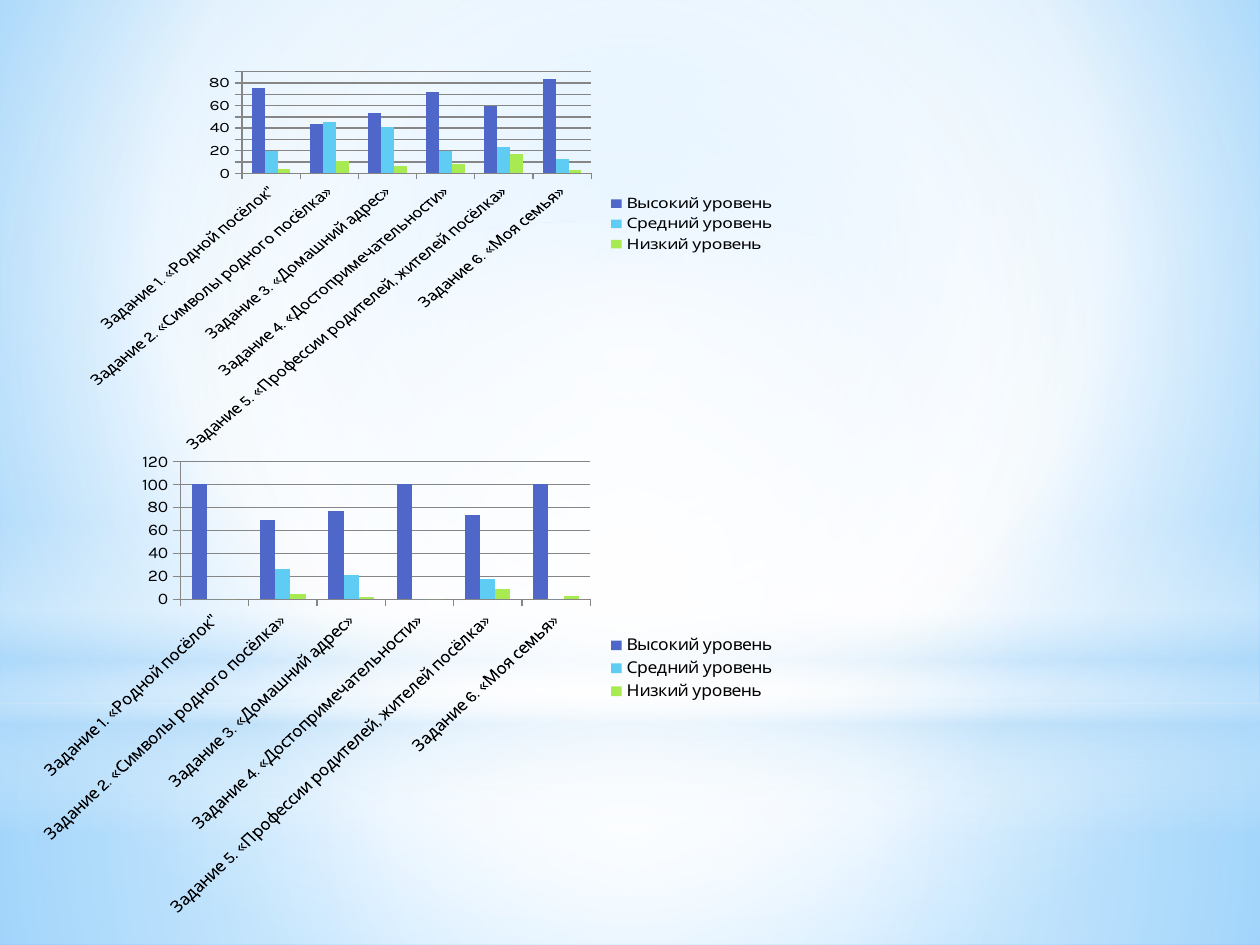
from lxml import etree
from pptx import Presentation
from pptx.chart.data import CategoryChartData
from pptx.dml.color import RGBColor
from pptx.enum.chart import XL_CHART_TYPE, XL_LEGEND_POSITION, XL_TICK_MARK
from pptx.enum.shapes import MSO_SHAPE
from pptx.oxml.ns import qn
from pptx.util import Inches, Pt

FONT = "Karla"
BLACK = RGBColor(0x00, 0x00, 0x00)
GRAY = RGBColor(0x86, 0x86, 0x86)
WHITE = RGBColor(0xFF, 0xFF, 0xFF)
PALE_BLUE = RGBColor(0xB4, 0xDC, 0xFA)
SKY_BLUE = RGBColor(0x9E, 0xD5, 0xFF)
DEEP_SKY = RGBColor(0x5B, 0xB9, 0xFF)
LEVELS = {
    "Высокий уровень": RGBColor(0x4E, 0x67, 0xC8),
    "Средний уровень": RGBColor(0x5E, 0xCC, 0xF3),
    "Низкий уровень": RGBColor(0xA7, 0xEA, 0x52),
}
TASKS = [
    'Задание 1. «Родной посёлок"',
    "Задание 2. «Символы родного посёлка»",
    "Задание 3. «Домашний адрес»",
    "Задание 4. «Достопримечательности»",
    "Задание 5. «Профессии родителей, жителей посёлка»",
    "Задание 6. «Моя семья»",
]
FIRST_RESULTS = [
    (76, 44, 53, 72, 60, 84),
    (20, 45, 41, 20, 23, 13),
    (4, 11, 6, 8, 17, 3),
]
SECOND_RESULTS = [
    (100, 69, 77, 100, 73, 100),
    (0, 26, 21, 0, 18, 0),
    (0, 5, 2, 0, 9, 3),
]
CENTRE = (50, 50, 50, 50)


def set_gradient(fill, element, stops, focus=None):
    """Apply (position, colour, opacity) stops, circular around focus or else vertical."""
    fill.gradient()
    gradient = element.find(".//" + qn("a:gradFill"))
    for child in list(gradient):
        gradient.remove(child)
    stop_list = etree.SubElement(gradient, qn("a:gsLst"))
    for position, color, opacity in stops:
        stop = etree.SubElement(stop_list, qn("a:gs"), pos=str(position * 1000))
        color_element = etree.SubElement(stop, qn("a:srgbClr"), val=str(color))
        if opacity < 100:
            etree.SubElement(color_element, qn("a:alpha"), val=str(opacity * 1000))
    if focus:
        circle = etree.SubElement(gradient, qn("a:path"), path="circle")
        edges = {side: str(value * 1000) for side, value in zip("ltrb", focus)}
        etree.SubElement(circle, qn("a:fillToRect"), **edges)
    else:
        etree.SubElement(gradient, qn("a:lin"), ang="5400000", scaled="0")


def add_glow(slide, kind, top, height, stops, focus=CENTRE):
    shape = slide.shapes.add_shape(kind, 0, Inches(top), Inches(10), Inches(height))
    shape.shadow.inherit = False
    shape.line.fill.background()
    set_gradient(shape.fill, shape.element, stops, focus)


def add_backdrop(slide):
    set_gradient(
        slide.background.fill, slide.element,
        [(0, SKY_BLUE, 100), (60, WHITE, 100), (100, DEEP_SKY, 100)],
        (20, 10, 20, 60),
    )
    add_glow(slide, MSO_SHAPE.RECTANGLE, 5.58, 1.92,
             [(0, WHITE, 91), (37, WHITE, 76), (100, PALE_BLUE, 79)])
    add_glow(slide, MSO_SHAPE.RECTANGLE, 0, 5.58,
             [(0, WHITE, 89), (48, WHITE, 62), (100, PALE_BLUE, 79)])
    add_glow(slide, MSO_SHAPE.RECTANGLE, 4.12, 2.5,
             [(0, WHITE, 0), (29, WHITE, 30), (45, PALE_BLUE, 40),
              (55, WHITE, 26), (65, PALE_BLUE, 60), (100, WHITE, 0)], focus=None)
    add_glow(slide, MSO_SHAPE.OVAL, 1.75, 5.58, [(0, WHITE, 100), (56, WHITE, 0)])


def add_level_chart(slide, left, top, width, height, results):
    chart_data = CategoryChartData()
    chart_data.categories = TASKS
    for level, values in zip(LEVELS, results):
        chart_data.add_series(level, values)
    chart = slide.shapes.add_chart(
        XL_CHART_TYPE.COLUMN_CLUSTERED,
        Inches(left), Inches(top), Inches(width), Inches(height), chart_data,
    ).chart
    chart.has_title = False
    chart.font.name = FONT
    chart.font.size = Pt(10)
    chart.font.color.rgb = BLACK
    chart.has_legend = True
    chart.legend.position = XL_LEGEND_POSITION.RIGHT
    chart.legend.include_in_layout = False
    for axis in (chart.category_axis, chart.value_axis):
        axis.major_tick_mark = XL_TICK_MARK.OUTSIDE
        axis.format.line.color.rgb = GRAY
    chart.value_axis.has_major_gridlines = True
    chart.value_axis.major_gridlines.format.line.color.rgb = GRAY
    plot = chart.plots[0]
    plot.vary_by_categories = False
    plot.gap_width = 150
    for series, color in zip(plot.series, LEVELS.values()):
        series.format.fill.solid()
        series.format.fill.fore_color.rgb = color


def main():
    presentation = Presentation()
    presentation.slide_width = Inches(10)
    presentation.slide_height = Inches(7.5)
    slide = presentation.slides.add_slide(presentation.slide_layouts[6])
    add_backdrop(slide)
    add_level_chart(slide, 0.59, 0.52, 5.67, 3.07, FIRST_RESULTS)
    add_level_chart(slide, 0.2, 3.59, 6.06, 3.68, SECOND_RESULTS)
    presentation.save("out.pptx")


if __name__ == "__main__":
    main()
